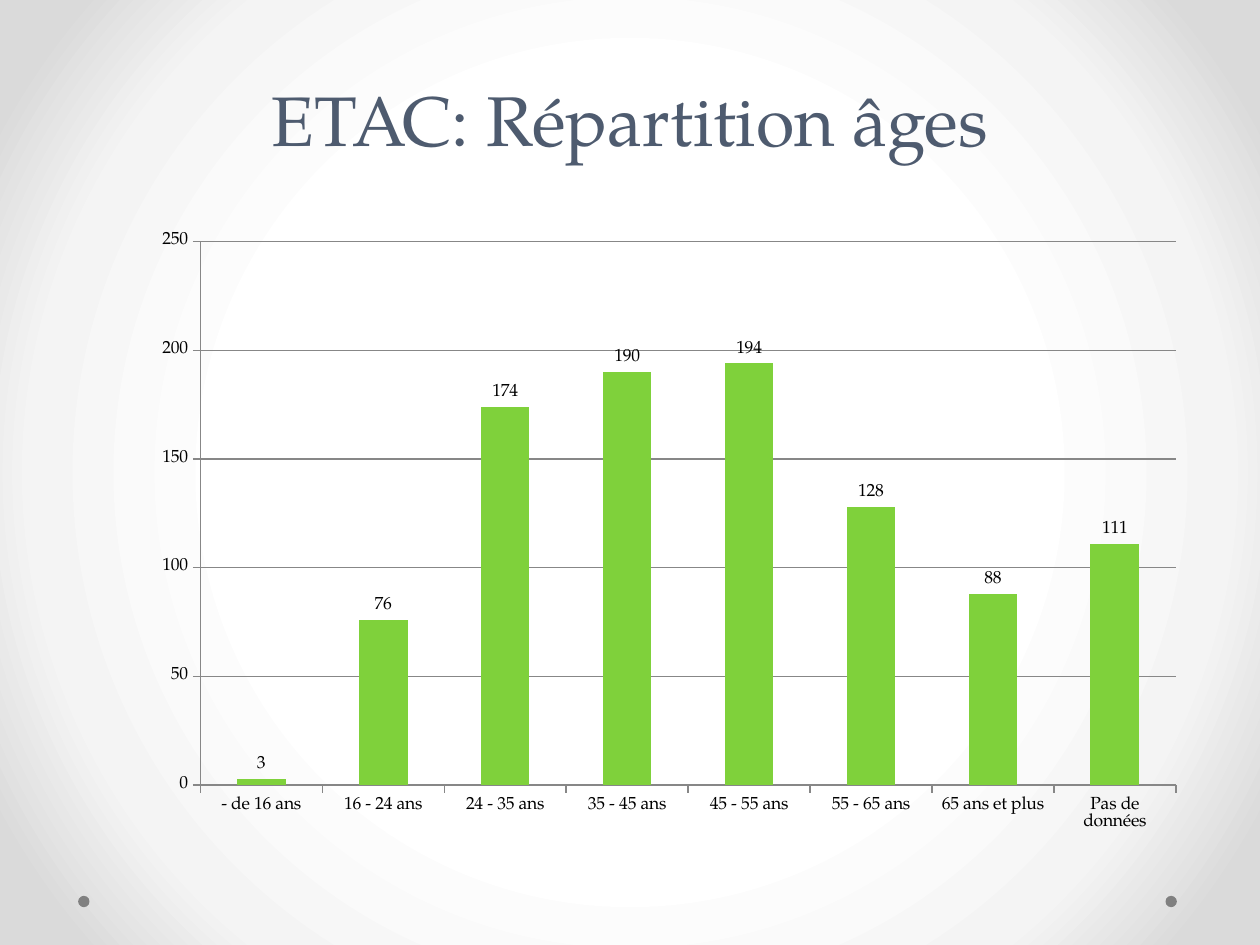
from dataclasses import dataclass

from lxml.etree import SubElement
from pptx import Presentation
from pptx.chart.axis import CategoryAxis, ValueAxis
from pptx.chart.data import CategoryChartData
from pptx.dml.color import RGBColor
from pptx.dml.fill import FillFormat
from pptx.dml.line import LineFormat
from pptx.enum.chart import XL_CHART_TYPE, XL_LABEL_POSITION, XL_TICK_MARK
from pptx.enum.shapes import MSO_SHAPE
from pptx.enum.text import MSO_ANCHOR, PP_ALIGN
from pptx.oxml.ns import qn
from pptx.slide import Slide
from pptx.util import Inches, Pt

FONT = "TeX Gyre Pagella"
AXIS_GRAY = "878787"


@dataclass
class AgeGroup:
    label: str
    count: int


@dataclass
class Dot:
    left: float
    top: float = 7.11
    size: float = 0.09


@dataclass
class GradientStop:
    percent: int
    color: str


AGE_GROUPS = [
    AgeGroup("- de 16 ans", 3),
    AgeGroup("16 - 24 ans", 76),
    AgeGroup("24 - 35 ans", 174),
    AgeGroup("35 - 45 ans", 190),
    AgeGroup("45 - 55 ans", 194),
    AgeGroup("55 - 65 ans", 128),
    AgeGroup("65 ans et plus", 88),
    AgeGroup("Pas de données", 111),
]
DOTS = [Dot(9.25), Dot(0.62)]
BACKGROUND_STOPS = [
    GradientStop(50, "FFFFFF"),
    GradientStop(76, "F4F4F4"),
    GradientStop(92, "DADADA"),
]


def rgb(color: str) -> RGBColor:
    return RGBColor.from_string(color)


def paint(fill: FillFormat, color: str) -> None:
    fill.solid()
    fill.fore_color.rgb = rgb(color)


def style_line(line: LineFormat) -> None:
    line.color.rgb = rgb(AXIS_GRAY)
    line.width = Pt(0.75)


def set_background(page: Slide) -> None:
    fill = page.background.fill
    fill.gradient()
    gradient = page.element.find(".//" + qn("a:gradFill"))
    for child in list(gradient):
        gradient.remove(child)
    stops = SubElement(gradient, qn("a:gsLst"))
    for stop in BACKGROUND_STOPS:
        mark = SubElement(stops, qn("a:gs"), pos=str(stop.percent * 1000))
        SubElement(mark, qn("a:srgbClr"), val=stop.color)
    shade = SubElement(gradient, qn("a:path"), path="circle")
    SubElement(shade, qn("a:fillToRect"), l="50000", t="50000", r="50000", b="50000")


def draw_dot(page: Slide, dot: Dot) -> None:
    shape = page.shapes.add_shape(
        MSO_SHAPE.OVAL, Inches(dot.left), Inches(dot.top), Inches(dot.size), Inches(dot.size)
    )
    shape.shadow.inherit = False
    paint(shape.fill, "808080")
    shape.line.fill.background()


def set_title(page: Slide, text: str) -> None:
    title = page.shapes.title
    title.left, title.top = Inches(0.5), Inches(0)
    title.width, title.height = Inches(9), Inches(1.75)
    frame = title.text_frame
    frame.text = text
    frame.word_wrap = True
    frame.vertical_anchor = MSO_ANCHOR.MIDDLE
    para = frame.paragraphs[0]
    para.alignment = PP_ALIGN.CENTER
    para.line_spacing = Pt(58)
    para.font.size = Pt(40)
    para.font.name = FONT
    para.font.color.rgb = rgb("4E5B6F")


def style_axis(axis: CategoryAxis | ValueAxis) -> None:
    axis.major_tick_mark = XL_TICK_MARK.OUTSIDE
    axis.minor_tick_mark = XL_TICK_MARK.NONE
    style_line(axis.format.line)


def draw_chart(page: Slide, groups: list[AgeGroup]) -> None:
    data = CategoryChartData()
    data.categories = [group.label for group in groups]
    data.add_series("Series 1", [group.count for group in groups])
    chart = page.shapes.add_chart(
        XL_CHART_TYPE.COLUMN_CLUSTERED, Inches(1.12), Inches(1.75), Inches(8.38), Inches(4.95), data
    ).chart
    chart.has_legend = False
    chart.has_title = False
    chart.font.name = FONT
    chart.font.size = Pt(10)
    chart.font.color.rgb = rgb("000000")

    style_axis(chart.category_axis)
    style_axis(chart.value_axis)
    chart.value_axis.minimum_scale = 0
    chart.value_axis.maximum_scale = 250
    chart.value_axis.major_unit = 50
    chart.value_axis.has_major_gridlines = True
    style_line(chart.value_axis.major_gridlines.format.line)

    plot = chart.plots[0]
    plot.gap_width = 150
    plot.vary_by_categories = False
    paint(plot.series[0].format.fill, "7FD13B")
    plot.has_data_labels = True
    plot.data_labels.show_value = True
    plot.data_labels.position = XL_LABEL_POSITION.OUTSIDE_END


def main() -> None:
    deck = Presentation()
    deck.slide_width, deck.slide_height = Inches(10), Inches(7.5)
    page = deck.slides.add_slide(deck.slide_layouts[5])
    set_background(page)
    for dot in DOTS:
        draw_dot(page, dot)
    set_title(page, "ETAC: Répartition âges")
    draw_chart(page, AGE_GROUPS)
    deck.save("out.pptx")


if __name__ == "__main__":
    main()
